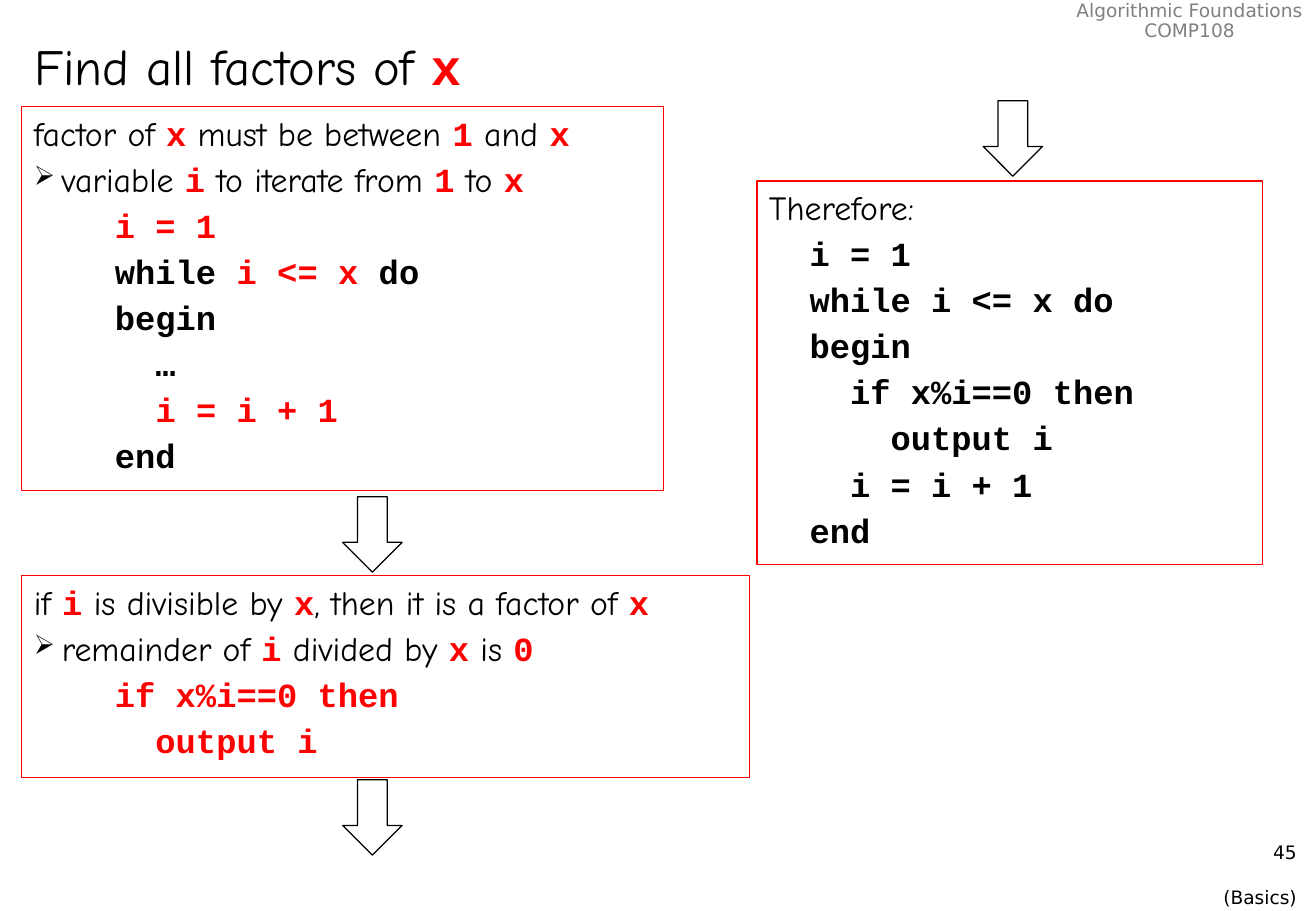
from lxml import etree
from pptx import Presentation
from pptx import util as u
from pptx.dml.color import RGBColor
from pptx.enum import shapes, text
from pptx.oxml.ns import qn

BLACK = RGBColor(0x00, 0x00, 0x00)
RED = RGBColor(0xFF, 0x00, 0x00)
GREY = RGBColor(0x80, 0x80, 0x80)
PROSE_FONT, CODE_FONT, MARGIN_FONT = "Comic Neue", "Courier New", "DejaVu Sans"
WIDTH, HEIGHT = u.Inches(10.83), u.Inches(7.5)

# Boxes are (left, top, width, height) in percent of the slide
HEADER_BOX = (80.79, 0, 19.21, 5.2)
FOOTER_BOX = (78.58, 91.6, 20.87, 6.67)
TITLE_BOX = (1.66, 3.07, 89.1, 8.13)
ARROW_SIZE = (4.52, 8.27)
ARROW_CORNERS = [(26.04, 85.6), (26.04, 54.53), (74.7, 11.07)]

# Panel lines are (kind, text); stretches between bars are red code
PANELS = [
    ((1.66, 11.73, 48.75, 42.13), [
        ("prose", "factor of |x| must be between |1| and |x|"),
        ("bullet", "variable |i| to iterate from |1| to |x|"),
        ("code", "|    i = 1|"),
        ("code", "    while |i <= x| do"),
        ("code", "    begin"),
        ("code", "      …"),
        ("code", "      |i = i + 1|"),
        ("code", "    end"),
    ]),
    ((1.66, 63.2, 55.31, 22.13), [
        ("prose", "if |i| is divisible by |x|, then it is a factor of |x|"),
        ("bullet", "remainder of |i| divided by |x| is |0|"),
        ("code", "|    if x%i==0 then|"),
        ("code", "|      output i|"),
    ]),
    ((57.53, 19.87, 38.41, 42.13), [
        ("prose", "Therefore:"),
        ("code", "  i = 1"),
        ("code", "  while i <= x do"),
        ("code", "  begin"),
        ("code", "    if x%i==0 then"),
        ("code", "      output i"),
        ("code", "    i = i + 1"),
        ("code", "  end"),
    ]),
]


def place(box):
    left, top, width, height = box
    return (int(WIDTH * left / 100), int(HEIGHT * top / 100),
            int(WIDTH * width / 100), int(HEIGHT * height / 100))


def style(font, name, color, size=None, bold=None):
    font.name = name
    font.color.rgb = color
    if size:
        font.size = u.Pt(size)
    font.bold = bold


def get_paragraph(frame, index):
    return frame.paragraphs[0] if index == 0 else frame.add_paragraph()


def add_bullet(paragraph):
    properties = paragraph._p.get_or_add_pPr()
    indent = u.Inches(0.23)
    properties.set("marL", str(indent))
    properties.set("indent", str(-indent))
    etree.SubElement(properties, qn("a:buSzPct")).set("val", "80000")
    etree.SubElement(properties, qn("a:buChar")).set("char", "➢")


def write_line(paragraph, kind, line, size):
    """Write a line whose stretches between bars are red code."""
    if kind == "bullet":
        add_bullet(paragraph)
    is_code = kind == "code"
    style(paragraph.font, CODE_FONT if is_code else PROSE_FONT, BLACK, size, is_code)
    for index, part in enumerate(line.split("|")):
        if part:
            run = paragraph.add_run()
            run.text = part
            if index % 2:
                style(run.font, CODE_FONT, RED, bold=True)


def add_title(slide, box):
    title = slide.shapes.title
    title.left, title.top, title.width, title.height = place(box)
    frame = title.text_frame
    frame.auto_size = text.MSO_AUTO_SIZE.NONE
    frame.vertical_anchor = text.MSO_ANCHOR.MIDDLE
    paragraph = frame.paragraphs[0]
    paragraph.alignment = text.PP_ALIGN.LEFT
    write_line(paragraph, "prose", "Find all factors of |x|", 30)


def add_outline(slide, preset, box, color):
    shape = slide.shapes.add_shape(preset, *place(box))
    shape.shadow.inherit = False
    shape.fill.background()
    shape.line.color.rgb = color
    shape.line.width = u.Pt(0.75)
    return shape


def add_panel(slide, box, lines):
    panel = add_outline(slide, shapes.MSO_SHAPE.RECTANGLE, box, RED)
    frame = panel.text_frame
    frame.word_wrap = True
    frame.vertical_anchor = text.MSO_ANCHOR.TOP
    for index, (kind, line) in enumerate(lines):
        paragraph = get_paragraph(frame, index)
        paragraph.alignment = text.PP_ALIGN.LEFT
        if index:
            paragraph.space_before = u.Pt(3.3)
        write_line(paragraph, kind, line, 20)


def add_margin_text(slide, box, lines, color, alignment):
    frame = slide.shapes.add_textbox(*place(box)).text_frame
    for index, line in enumerate(lines):
        paragraph = get_paragraph(frame, index)
        paragraph.text = line
        paragraph.alignment = alignment
        style(paragraph.font, MARGIN_FONT, color, 11)
    return frame


def add_header(slide, box):
    frame = add_margin_text(slide, box, ["Algorithmic Foundations", "COMP108"],
                            GREY, text.PP_ALIGN.CENTER)
    frame.word_wrap = False
    frame.margin_top = u.Inches(0.01)
    for paragraph in frame.paragraphs:
        paragraph.line_spacing = 0.9


def add_footer(slide, box):
    frame = add_margin_text(slide, box, ["45", "(Basics)"], BLACK, text.PP_ALIGN.RIGHT)
    frame.word_wrap = True
    frame.paragraphs[1].space_before = u.Pt(13.5)


def main():
    presentation = Presentation()
    presentation.slide_width, presentation.slide_height = WIDTH, HEIGHT
    slide = presentation.slides.add_slide(presentation.slide_layouts[5])
    add_title(slide, TITLE_BOX)
    add_header(slide, HEADER_BOX)
    add_footer(slide, FOOTER_BOX)
    for box, lines in PANELS:
        add_panel(slide, box, lines)
    for corner in ARROW_CORNERS:
        add_outline(slide, shapes.MSO_SHAPE.DOWN_ARROW, corner + ARROW_SIZE, BLACK)
    presentation.save("out.pptx")


if __name__ == "__main__":
    main()
